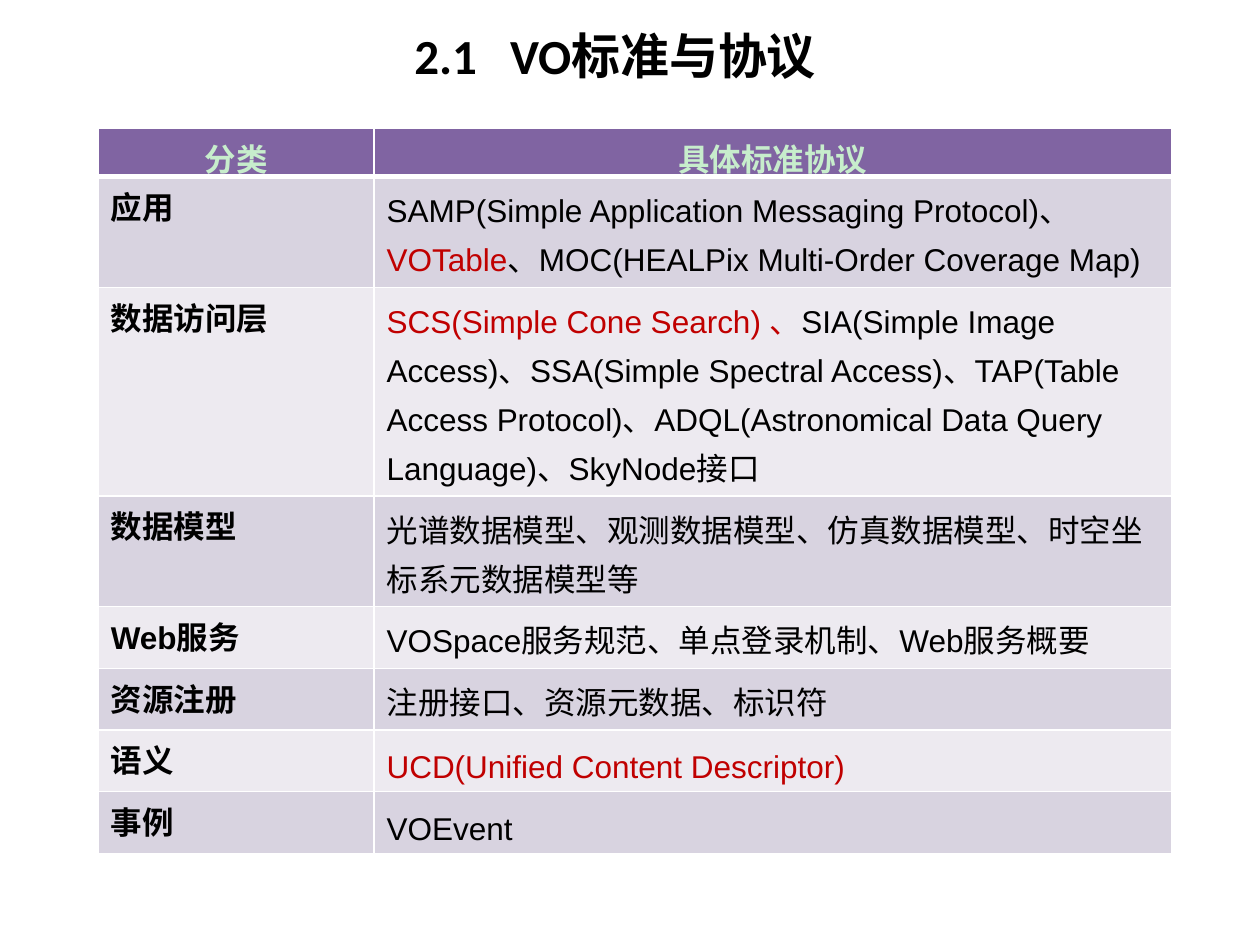
from lxml.etree import SubElement
from pptx import Presentation
from pptx.dml.color import RGBColor
from pptx.enum.text import MSO_ANCHOR, PP_ALIGN
from pptx.oxml.ns import qn
from pptx.util import Cm, Pt

COLORS = {
    "black": "000000",
    "red": "C00000",
    "header_text": "C7EDCC",
    "header": "8064A2",
    "odd_row": "D8D3E0",
    "even_row": "EDEAF0",
    "border": "FFFFFF",
}
HEADERS = ["分类", "具体标准协议"]
STANDARDS = [
    ("应用", [
        ("SAMP(Simple Application Messaging Protocol)、", "black"),
        ("VOTable", "red"),
        ("、MOC(HEALPix Multi-Order Coverage Map)", "black"),
    ]),
    ("数据访问层", [
        ("SCS(Simple Cone Search) 、", "red"),
        ("SIA(Simple Image Access)、SSA(Simple Spectral Access)、"
         "TAP(Table Access Protocol)、ADQL(Astronomical Data Query Language)、"
         "SkyNode接口", "black"),
    ]),
    ("数据模型", [("光谱数据模型、观测数据模型、仿真数据模型、时空坐标系元数据模型等", "black")]),
    ("Web服务", [("VOSpace服务规范、单点登录机制、Web服务概要", "black")]),
    ("资源注册", [("注册接口、资源元数据、标识符", "black")]),
    ("语义", [("UCD(Unified Content Descriptor)", "red")]),
    ("事例", [("VOEvent", "black")]),
]


def color(name):
    """Return the named color."""
    return RGBColor.from_string(COLORS[name])


def set_font(paragraph, name, size, bold):
    """Set the font shared by all runs of a paragraph."""
    font = paragraph.font
    font.name, font.size, font.bold = name, Pt(size), bold


def add_runs(paragraph, runs):
    """Add colored runs of text to a paragraph."""
    for text, color_name in runs:
        run = paragraph.add_run()
        run.text = text
        run.font.color.rgb = color(color_name)


def add_title(slide):
    """Add the centered title with a wide gap after its number."""
    box = slide.shapes.add_textbox(Cm(1), Cm(0.41), Cm(22.8), Cm(1.4))
    frame = box.text_frame
    frame.word_wrap = True
    frame.vertical_anchor = MSO_ANCHOR.MIDDLE
    paragraph = frame.paragraphs[0]
    paragraph.alignment = PP_ALIGN.CENTER
    set_font(paragraph, "Calibri", 28, True)
    add_runs(paragraph, [(text, "black") for text in ("2.1", " ", "VO标准与协议")])
    gap = paragraph.runs[1]
    gap.font._element.set("spc", "1270")


def set_borders(cell, top, bottom):
    """Draw the four borders of a cell, with widths in points."""
    properties = cell._tc.get_or_add_tcPr()
    for side, width in (("L", 1), ("R", 1), ("T", top), ("B", bottom)):
        line = SubElement(properties, qn(f"a:ln{side}"), w=str(Pt(width)))
        fill = SubElement(line, qn("a:solidFill"))
        SubElement(fill, qn("a:srgbClr"), val=COLORS["border"])


def fill_cell(cell, runs, fill, bold, top=1, bottom=1):
    """Style a cell, write its runs and return its paragraph."""
    set_borders(cell, top, bottom)
    cell.fill.solid()
    cell.fill.fore_color.rgb = color(fill)
    paragraph = cell.text_frame.paragraphs[0]
    set_font(paragraph, "Arial", 18, bold)
    add_runs(paragraph, runs)
    return paragraph


def add_standards_table(slide):
    """Add the table of standards by category."""
    shape = slide.shapes.add_table(
        len(STANDARDS) + 1, 2, Cm(1.98), Cm(2.59), Cm(21.64), Cm(13.67))
    table = shape.table
    for column, width in zip(table.columns, (5.56, 16.08)):
        column.width = Cm(width)
    for row in table.rows:
        row.height = Cm(0.97)
    for index, header in enumerate(HEADERS):
        cell = table.cell(0, index)
        cell.margin_bottom = 0
        paragraph = fill_cell(cell, [(header, "header_text")], "header", True, bottom=3)
        paragraph.alignment = PP_ALIGN.CENTER
    for index, (category, protocols) in enumerate(STANDARDS, start=1):
        fill = "odd_row" if index % 2 else "even_row"
        top = 3 if index == 1 else 1
        fill_cell(table.cell(index, 0), [(category, "black")], fill, True, top)
        paragraph = fill_cell(table.cell(index, 1), protocols, fill, False, top)
        paragraph.line_spacing = Pt(28)


def main():
    """Build and save the slide."""
    presentation = Presentation()
    presentation.slide_width, presentation.slide_height = Cm(25.4), Cm(19.05)
    slide = presentation.slides.add_slide(presentation.slide_layouts[6])
    add_title(slide)
    add_standards_table(slide)
    presentation.save("out.pptx")


if __name__ == "__main__":
    main()
